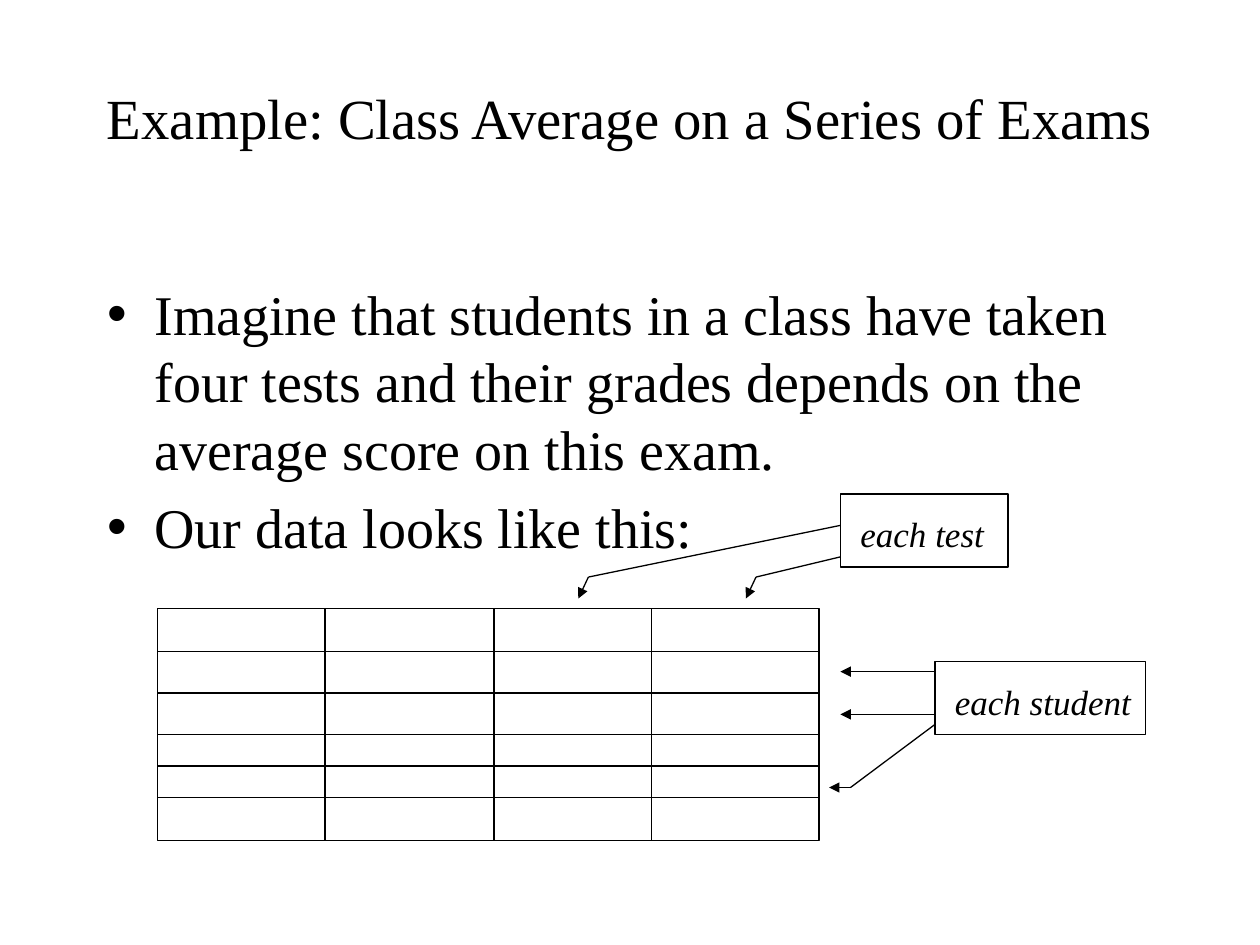
from dataclasses import dataclass

from pptx import Presentation
from pptx import util as u
from pptx.dml.color import RGBColor
from pptx.enum import shapes, text
from pptx.oxml import ns
from lxml import etree


@dataclass(frozen=True)
class Theme:
    font: str = "Times New Roman"
    ink: RGBColor = RGBColor(0, 0, 0)
    title: float = 32.4
    body: float = 32
    label: float = 20
    stroke: float = 0.75


THEME = Theme()


def style(paragraph, size, italic=None):
    font = paragraph.font
    font.name, font.size, font.italic = THEME.font, u.Pt(size), italic
    font.color.rgb = THEME.ink


def fill_placeholder(placeholder, bounds, paragraphs, size):
    (placeholder.left, placeholder.top,
     placeholder.width, placeholder.height) = map(u.Inches, bounds)
    frame = placeholder.text_frame
    frame.text = "\n".join(paragraphs)
    frame.auto_size = text.MSO_AUTO_SIZE.NONE
    for paragraph in frame.paragraphs:
        style(paragraph, size)


def outline(slide, left, top, width, height):
    box = slide.shapes.add_shape(shapes.MSO_SHAPE.RECTANGLE,
                                 *map(u.Inches, (left, top, width, height)))
    box.shadow.inherit = False
    box.fill.background()
    box.line.color.rgb = THEME.ink
    box.line.width = u.Pt(THEME.stroke)


def line(slide, start, end, arrow=False):
    stroke = slide.shapes.add_connector(shapes.MSO_CONNECTOR.STRAIGHT,
                                        *map(u.Inches, (*start, *end)))
    stroke.line.color.rgb = THEME.ink
    stroke.line.width = u.Pt(THEME.stroke)
    if arrow:
        etree.SubElement(stroke.line._get_or_add_ln(),
                         ns.qn("a:tailEnd"), type="triangle")
    etree.SubElement(stroke._element.spPr, ns.qn("a:effectLst"))


def grid(slide, columns, rows):
    left, right, top, bottom = columns[0], columns[-1], rows[0], rows[-1]
    outline(slide, left, top, right - left, bottom - top)
    for x in columns[1:-1]:
        line(slide, (x, top), (x, bottom))
    for y in rows[1:-1]:
        line(slide, (left, y), (right, y))


def callout(slide, caption, left, top, width, caption_width):
    label = slide.shapes.add_textbox(
        *map(u.Inches, (left + 0.06, top + 0.1, caption_width, 0.43)))
    frame = label.text_frame
    frame.word_wrap = False
    frame.auto_size = text.MSO_AUTO_SIZE.SHAPE_TO_FIT_TEXT
    frame.text = caption
    style(frame.paragraphs[0], THEME.label, italic=True)
    outline(slide, left, top, width, 0.58)


def bent_arrow(slide, start, bend, tip):
    line(slide, start, bend)
    line(slide, bend, tip, arrow=True)


def main():
    deck = Presentation()
    deck.slide_width, deck.slide_height = u.Inches(10), u.Inches(7.5)
    slide = deck.slides.add_slide(deck.slide_layouts[1])
    title, body = slide.placeholders

    fill_placeholder(title, (0.5, 0.3, 9, 1.25),
                     ["Example: Class Average on a Series of Exams"], THEME.title)
    fill_placeholder(body, (0.75, 2.17, 8.5, 2.42), [
        "Imagine that students in a class have taken four tests and their "
        "grades depends on the average score on this exam.",
        "Our data looks like this:",
    ], THEME.body)

    grid(slide, columns=(1.25, 2.58, 3.92, 5.17, 6.5),
         rows=(4.83, 5.17, 5.5, 5.83, 6.08, 6.33, 6.67))

    test_left, student_left = 6.67, 7.42
    callout(slide, "each test", test_left, 3.92, 1.33, 1.18)
    for start_y, bend_x in ((4.17, 4.67), (4.42, 6)):
        bent_arrow(slide, (test_left, start_y), (bend_x, 4.58), (bend_x - 0.08, 4.75))

    callout(slide, "each student", student_left, 5.25, 1.67, 1.6)
    for y in (5.33, 5.67):
        line(slide, (student_left, y), (6.67, y), arrow=True)
    bent_arrow(slide, (student_left, 5.75), (6.75, 6.25), (6.58, 6.25))

    deck.save("out.pptx")


if __name__ == "__main__":
    main()
